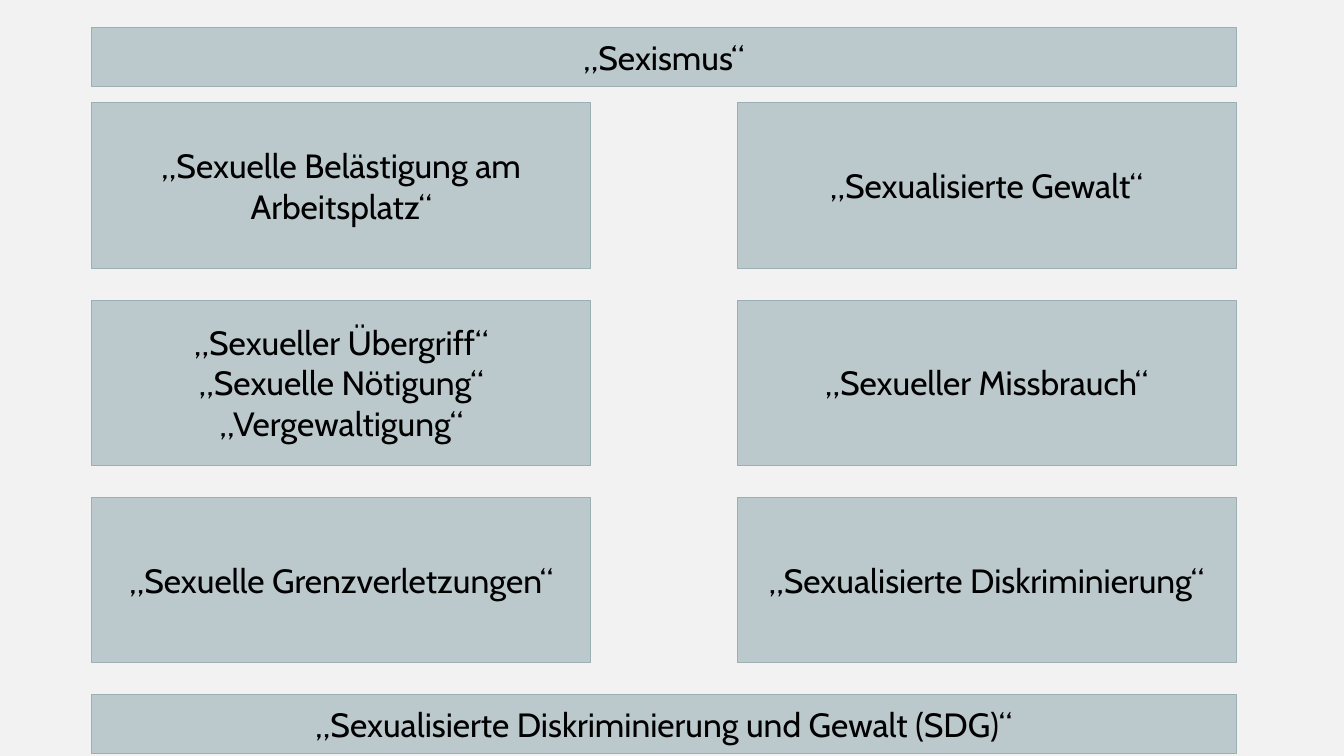
from dataclasses import dataclass

from pptx import Presentation
from pptx.dml.color import RGBColor
from pptx.enum.shapes import MSO_SHAPE
from pptx.enum.text import MSO_ANCHOR, PP_ALIGN
from pptx.slide import Slide
from pptx.util import Inches, Pt


@dataclass(frozen=True)
class Theme:
    background: RGBColor = RGBColor(0xF2, 0xF2, 0xF2)
    fill_top: RGBColor = RGBColor(0xBB, 0xC8, 0xCC)
    fill_bottom: RGBColor = RGBColor(0xB8, 0xC6, 0xCB)
    border: RGBColor = RGBColor(0x9B, 0xAF, 0xB5)
    text: RGBColor = RGBColor(0, 0, 0)
    font: str = "Cabin"
    size: Pt = Pt(24)
    border_width: Pt = Pt(0.5)


@dataclass(frozen=True)
class Grid:
    left: float = 0.91
    top: float = 1.02
    column_step: float = 6.4
    row_step: float = 1.955
    cell_width: float = 4.95
    cell_height: float = 1.64
    banner_height: float = 0.59

    def column(self, index: int) -> float:
        return self.left + index * self.column_step

    def row(self, index: int) -> float:
        return self.top + index * self.row_step

    @property
    def width(self) -> float:
        return self.column_step + self.cell_width


@dataclass(frozen=True)
class Box:
    left: float
    top: float
    width: float
    height: float
    lines: tuple[str, ...]


THEME = Theme()
GRID = Grid()

TERMS = (
    (("„Sexuelle Belästigung am Arbeitsplatz“",), ("„Sexualisierte Gewalt“",)),
    (
        ("„Sexueller Übergriff“", "„Sexuelle Nötigung“", "„Vergewaltigung“"),
        ("„Sexueller Missbrauch“",),
    ),
    (("„Sexuelle Grenzverletzungen“",), ("„Sexualisierte Diskriminierung“",)),
)
BANNERS = (
    (0.27, "„Sexismus“"),
    (GRID.row(3), "„Sexualisierte Diskriminierung und Gewalt (SDG)“"),
)


def layout_boxes() -> list[Box]:
    cells = [
        Box(GRID.column(c), GRID.row(r), GRID.cell_width, GRID.cell_height, lines)
        for r, row in enumerate(TERMS)
        for c, lines in enumerate(row)
    ]
    banners = [
        Box(GRID.left, top, GRID.width, GRID.banner_height, (text,))
        for top, text in BANNERS
    ]
    return cells + banners


def draw_box(slide: Slide, box: Box) -> None:
    sp = slide.shapes.add_shape(
        MSO_SHAPE.RECTANGLE,
        Inches(box.left), Inches(box.top), Inches(box.width), Inches(box.height),
    )
    sp.shadow.inherit = False
    sp.fill.gradient()
    sp.fill.gradient_angle = 270
    for stop, color in zip(sp.fill.gradient_stops, (THEME.fill_top, THEME.fill_bottom)):
        stop.color.rgb = color
    sp.line.color.rgb = THEME.border
    sp.line.width = THEME.border_width
    tf = sp.text_frame
    tf.word_wrap = True
    tf.vertical_anchor = MSO_ANCHOR.MIDDLE
    tf.text = "\n".join(box.lines)
    for p in tf.paragraphs:
        p.alignment = PP_ALIGN.CENTER
        p.font.name = THEME.font
        p.font.size = THEME.size
        p.font.color.rgb = THEME.text


def main() -> None:
    prs = Presentation()
    prs.slide_width, prs.slide_height = Inches(13.33), Inches(7.5)
    slide = prs.slides.add_slide(prs.slide_layouts[6])
    slide.background.fill.solid()
    slide.background.fill.fore_color.rgb = THEME.background
    for box in layout_boxes():
        draw_box(slide, box)
    prs.save("out.pptx")


if __name__ == "__main__":
    main()
